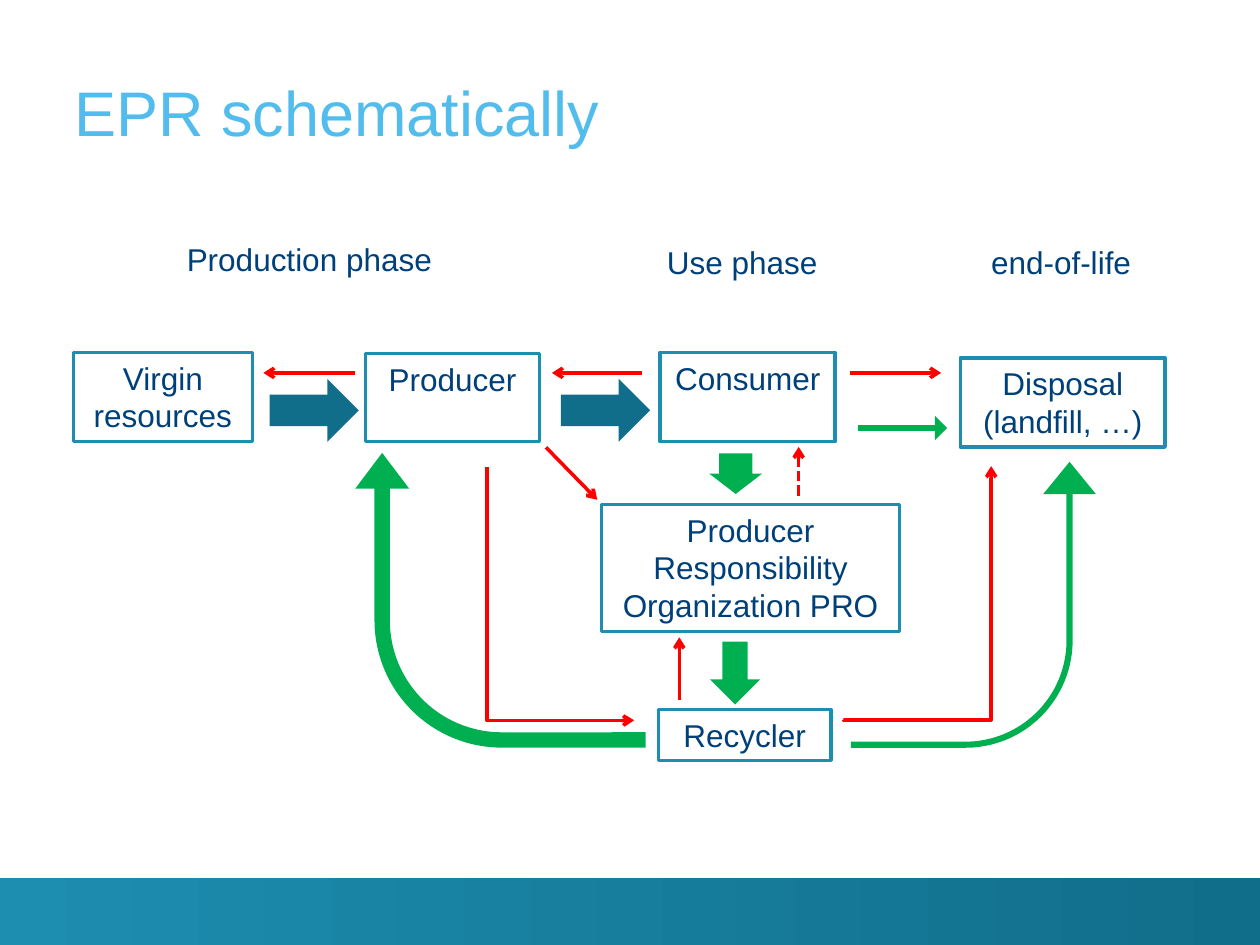
from lxml.etree import SubElement
from pptx import Presentation
from pptx.dml.color import RGBColor
from pptx.enum.dml import MSO_LINE
from pptx.enum.shapes import MSO_CONNECTOR, MSO_SHAPE
from pptx.enum.text import MSO_ANCHOR, PP_ALIGN
from pptx.oxml.ns import qn
from pptx.util import Pt

SKY = RGBColor(0x52, 0xBD, 0xEC)
NAVY = RGBColor(0x00, 0x40, 0x7A)
TEAL = RGBColor(0x1D, 0x8D, 0xB0)
DEEP = RGBColor(0x11, 0x6E, 0x8A)
GREEN = RGBColor(0x00, 0xB0, 0x50)
RED = RGBColor(0xFF, 0x00, 0x00)

TITLE = ("EPR schematically", (42.5, 14.4, 656, 70.6))
PHASES = [
    ("Production phase", (82.8, 133.9, 187.9, 31.7)),
    ("Use phase", (362.2, 135.4, 123.8, 31.7)),
    ("end-of-life", (556.6, 135.4, 99.4, 31.7)),
]
BOXES = [
    ("Producer Responsibility\nOrganization PRO", (343.8, 288.2, 170.2, 72.7)),
    ("Producer", (208.9, 202, 99.4, 50.4)),
    ("Consumer", (377.3, 201.4, 100, 51)),
    ("Disposal\v(landfill, …)", (548.8, 204.5, 117, 51)),
    ("Virgin resources", (41.9, 201.4, 102.3, 51)),
    ("Recycler", (376.2, 405.5, 98.6, 29)),
]
RIGHT, BENT = MSO_SHAPE.RIGHT_ARROW, MSO_SHAPE.BENT_ARROW
# kind, frame before turning, colour, turn, mirrored, adjustments
ARROWS = [
    (RIGHT, (154, 216.5, 51, 36), DEEP, 0, False, ()),
    (RIGHT, (320.5, 216.5, 51, 36), DEEP, 0, False, ()),
    (RIGHT, (408.8, 255.6, 23.2, 30.2), GREEN, 90, False, (0.63, 0.5)),
    (RIGHT, (402, 370.2, 36, 28.8), GREEN, 90, False, ()),
    (BENT, (201.8, 260, 168.4, 166), GREEN, 270, False, (0.053, 0.093, 0.123, 0.438)),
    (BENT, (474.6, 275.6, 163.4, 140), GREEN, 90, True, (0.025, 0.108, 0.132, 0.438)),
    (RIGHT, (490.2, 237.6, 51, 14), GREEN, 0, False, (0.23, 0.5)),
]
# start, end, dashed
FLOWS = [
    ((366.8, 213.1), (315.4, 213.1), False),
    ((312, 255.6), (341.3, 285.6), False),
    ((203, 213.1), (150.5, 213.1), False),
    ((485.8, 213.1), (537.8, 213.1), False),
    ((388.2, 400), (388.2, 364.2), False),
    ((456.4, 283.2), (456.4, 255.4), True),
]
# top of the upright part, end of the flat part, arrow end
ELBOWS = [
    ((278.2, 267), (362.4, 411.6), "tailEnd"),
    ((566.4, 266.4), (482, 411.2), "headEnd"),
]

deck = Presentation()
deck.slide_width, deck.slide_height = Pt(720), Pt(540)
slide = deck.slides.add_slide(deck.slide_layouts[6])
shapes = slide.shapes


def assign(item, **values):
    for name, value in values.items():
        setattr(item, name, value)


def write(frame, text, size=18, color=NAVY, align=PP_ALIGN.CENTER, **look):
    frame.text = text
    assign(frame, word_wrap=True, **look)
    for para in frame.paragraphs:
        para.alignment = align
        assign(para.font, size=Pt(size), name="Arial")
        para.font.color.rgb = color


def draw(kind, place):
    shape = shapes.add_shape(kind, *map(Pt, place))
    shape.shadow.inherit = False
    return shape


def link(kind, start, end, mark="tailEnd", dashed=False):
    line = shapes.add_connector(kind, *map(Pt, start + end))
    line.line.color.rgb = RED
    line.line.width = Pt(2)
    if dashed:
        line.line.dash_style = MSO_LINE.SQUARE_DOT
    props = line._element.spPr
    SubElement(props.find(qn("a:ln")), qn("a:" + mark), type="arrow")
    SubElement(props, qn("a:effectLst"))
    return props


def elbow(top, foot, mark):
    """Run upright from top, then flat to foot, as a quarter-turned connector."""
    (x1, y1), (x2, y2) = top, foot
    mid_x, mid_y = (x1 + x2) / 2, (y1 + y2) / 2
    long, half = (y2 - y1) / 2, abs(x2 - x1) / 2
    toward = 1 if x2 < x1 else -1
    start = (mid_x - toward * long, mid_y - half)
    end = (mid_x + toward * long, mid_y + half)
    props = link(MSO_CONNECTOR.ELBOW, start, end, mark)
    turn = 90 if toward > 0 else 270
    props.find(qn("a:xfrm")).set("rot", str(turn * 60000))
    guides = props.find(qn("a:prstGeom")).find(qn("a:avLst"))
    SubElement(guides, qn("a:gd"), name="adj1", fmla="val 100100")


band = draw(MSO_SHAPE.RECTANGLE, (0, 501.8, 720, 38.2))
band.line.fill.background()
band.fill.gradient()
band.fill.gradient_angle = 0
for stop, color, spot in zip(band.fill.gradient_stops, (TEAL, DEEP), (0, 1)):
    stop.color.rgb = color
    stop.position = spot

text, place = TITLE
title = shapes.add_textbox(*map(Pt, place))
write(title.text_frame, text, 36, SKY, PP_ALIGN.LEFT,
      vertical_anchor=MSO_ANCHOR.BOTTOM, margin_left=0, margin_right=0,
      margin_top=0, margin_bottom=0)

for text, place in BOXES:
    box = draw(MSO_SHAPE.RECTANGLE, place)
    box.fill.background()
    box.line.color.rgb = TEAL
    box.line.width = Pt(2)
    write(box.text_frame, text, vertical_anchor=MSO_ANCHOR.TOP)

for kind, place, color, turn, flip, adjust in ARROWS:
    arrow = draw(kind, place)
    arrow.fill.solid()
    arrow.fill.fore_color.rgb = color
    arrow.line.fill.background()
    arrow.rotation = turn
    if flip:
        arrow._element.spPr.find(qn("a:xfrm")).set("flipH", "1")
    for at, value in enumerate(adjust):
        arrow.adjustments[at] = value

for start, end, dashed in FLOWS:
    link(MSO_CONNECTOR.STRAIGHT, start, end, dashed=dashed)
for top, foot, mark in ELBOWS:
    elbow(top, foot, mark)

for text, place in PHASES:
    write(shapes.add_textbox(*map(Pt, place)).text_frame, text)

deck.save("out.pptx")
